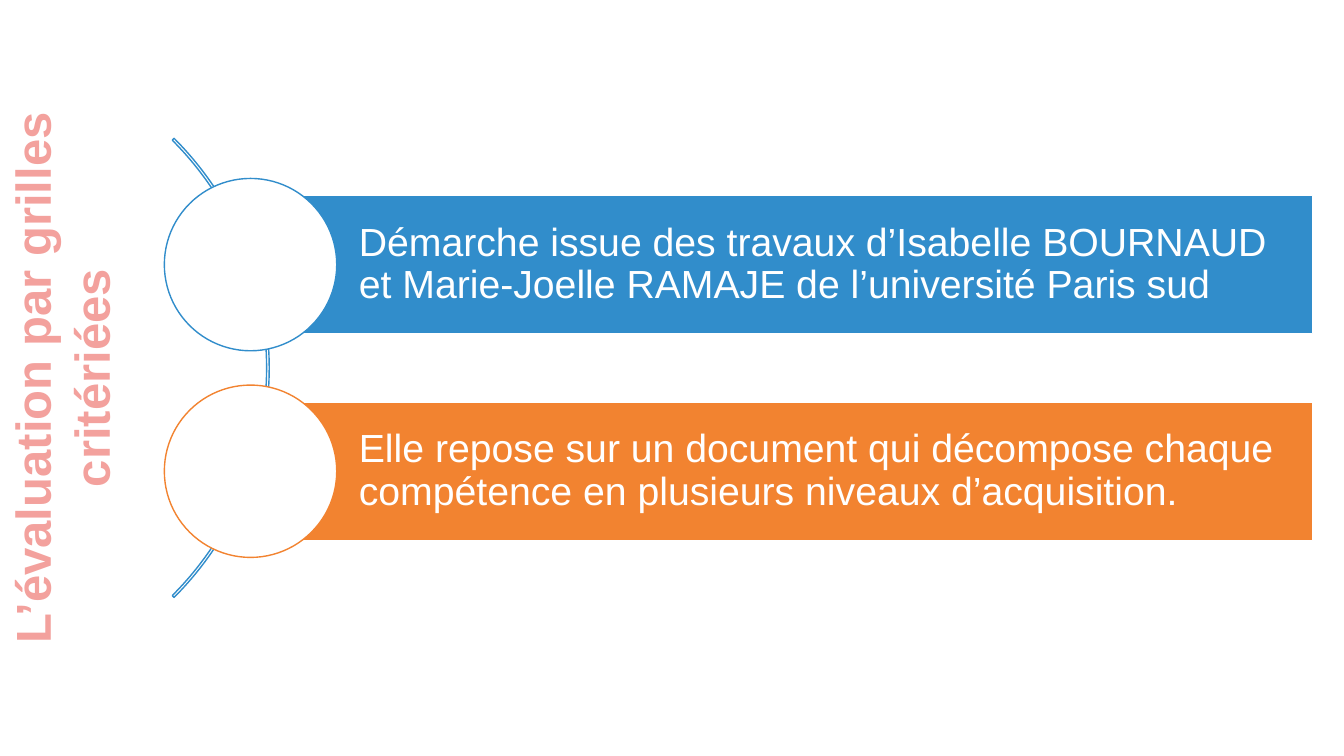
from dataclasses import dataclass

from pptx import Presentation
from pptx.dml.color import RGBColor
from pptx.enum.shapes import MSO_SHAPE
from pptx.enum.text import MSO_ANCHOR, PP_ALIGN
from pptx.util import Inches, Pt


@dataclass(frozen=True)
class Theme:
    font: str = "Arial"
    title: str = "F3A19D"
    blue: str = "318DCB"
    orange: str = "F28330"
    white: str = "FFFFFF"
    title_size: int = 35
    body_size: int = 28
    line: int = 1


THEME = Theme()
TITLE = "L’évaluation par grilles critériées"
ITEMS = [
    ("Démarche issue des travaux d’Isabelle BOURNAUD et Marie-Joelle RAMAJE "
     "de l’université Paris sud", THEME.blue),
    ("Elle repose sur un document qui décompose chaque compétence en "
     "plusieurs niveaux d’acquisition.", THEME.orange),
]
MID = 3.65
STEP = 2.05
BAR_H = 1.37
DISC = 1.71
ARC = 6.44


def add_shape(slide, kind, box, fill, line):
    shape = slide.shapes.add_shape(kind, *map(Inches, box))
    shape.shadow.inherit = False
    if fill:
        shape.fill.solid()
        shape.fill.fore_color.rgb = RGBColor.from_string(fill)
    else:
        shape.fill.background()
    shape.line.color.rgb = RGBColor.from_string(line)
    shape.line.width = Pt(THEME.line)
    return shape


def set_text(shape, text, size, color, align, bold=False):
    frame = shape.text_frame
    frame.word_wrap = True
    frame.text = text
    para = frame.paragraphs[0]
    para.alignment = align
    font = para.runs[0].font
    font.name = THEME.font
    font.size = Pt(size)
    font.bold = bold
    font.color.rgb = RGBColor.from_string(color)


def add_title(slide):
    box = slide.shapes.add_textbox(
        Inches(-3.14), Inches(3.11), Inches(7.5), Inches(1.28))
    box.rotation = 270
    set_text(box, TITLE, THEME.title_size, THEME.title, PP_ALIGN.CENTER, True)


def add_arc(slide):
    """Draw the thin arc that links the discs, open from -45 to 45 degrees."""
    arc = add_shape(slide, MSO_SHAPE.BLOCK_ARC,
                    (-3.77, MID - ARC / 2, ARC, ARC), None, THEME.blue)
    for i, value in enumerate((189, 27, 0.004)):
        arc.adjustments[i] = value


def add_item(slide, mid, text, color):
    """Draw one bar with its text and the disc at its left end."""
    bar = add_shape(slide, MSO_SHAPE.RECTANGLE,
                    (2.48, mid - BAR_H / 2, 10.54, BAR_H), color, THEME.white)
    set_text(bar, text, THEME.body_size, THEME.white, PP_ALIGN.LEFT)
    frame = bar.text_frame
    frame.vertical_anchor = MSO_ANCHOR.MIDDLE
    frame.margin_left = Inches(1.08)
    frame.margin_right = frame.margin_top = frame.margin_bottom = Inches(0.08)
    frame.paragraphs[0].line_spacing = 0.9
    add_shape(slide, MSO_SHAPE.OVAL,
              (1.63, mid - DISC / 2, DISC, DISC), THEME.white, color)


def main():
    deck = Presentation()
    deck.slide_width = Inches(13.33)
    deck.slide_height = Inches(7.5)
    slide = deck.slides.add_slide(deck.slide_layouts[6])
    add_title(slide)
    add_arc(slide)
    for i, (text, color) in enumerate(ITEMS):
        add_item(slide, MID + (i - 0.5) * STEP, text, color)
    deck.save("out.pptx")


if __name__ == "__main__":
    main()
